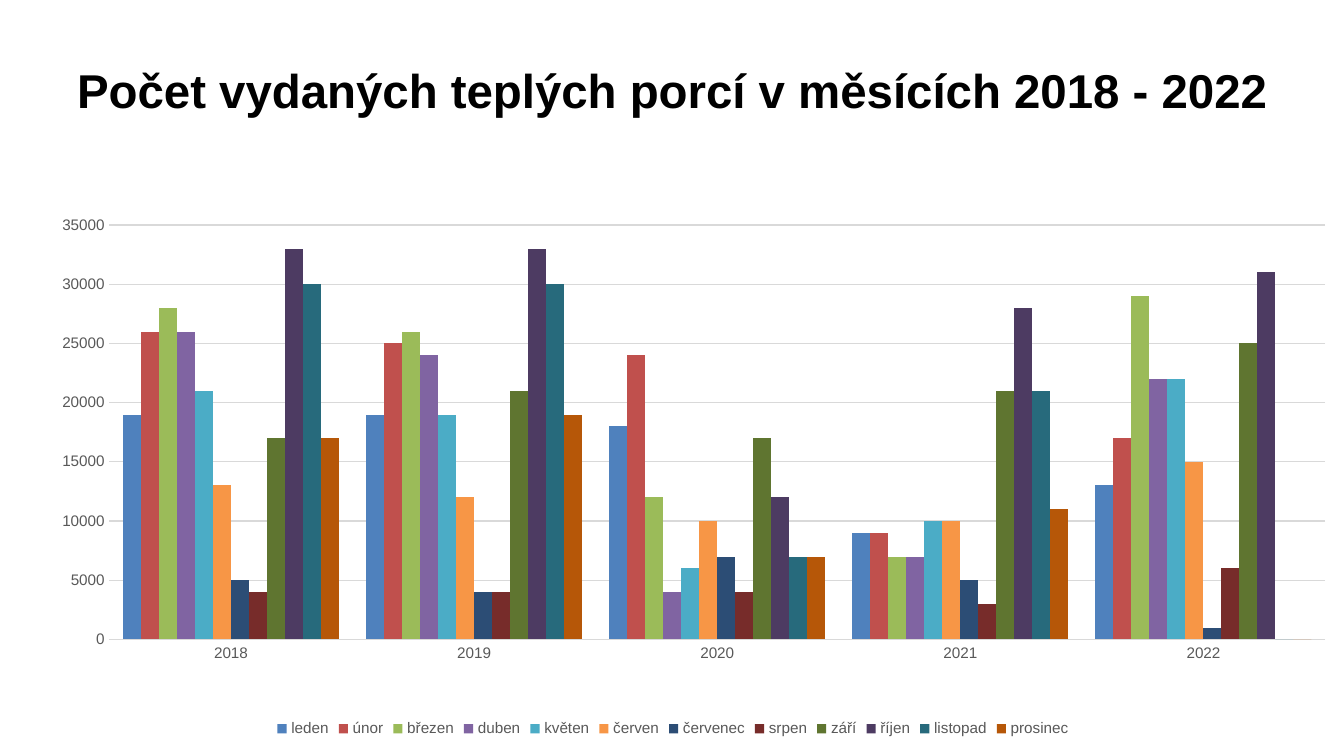
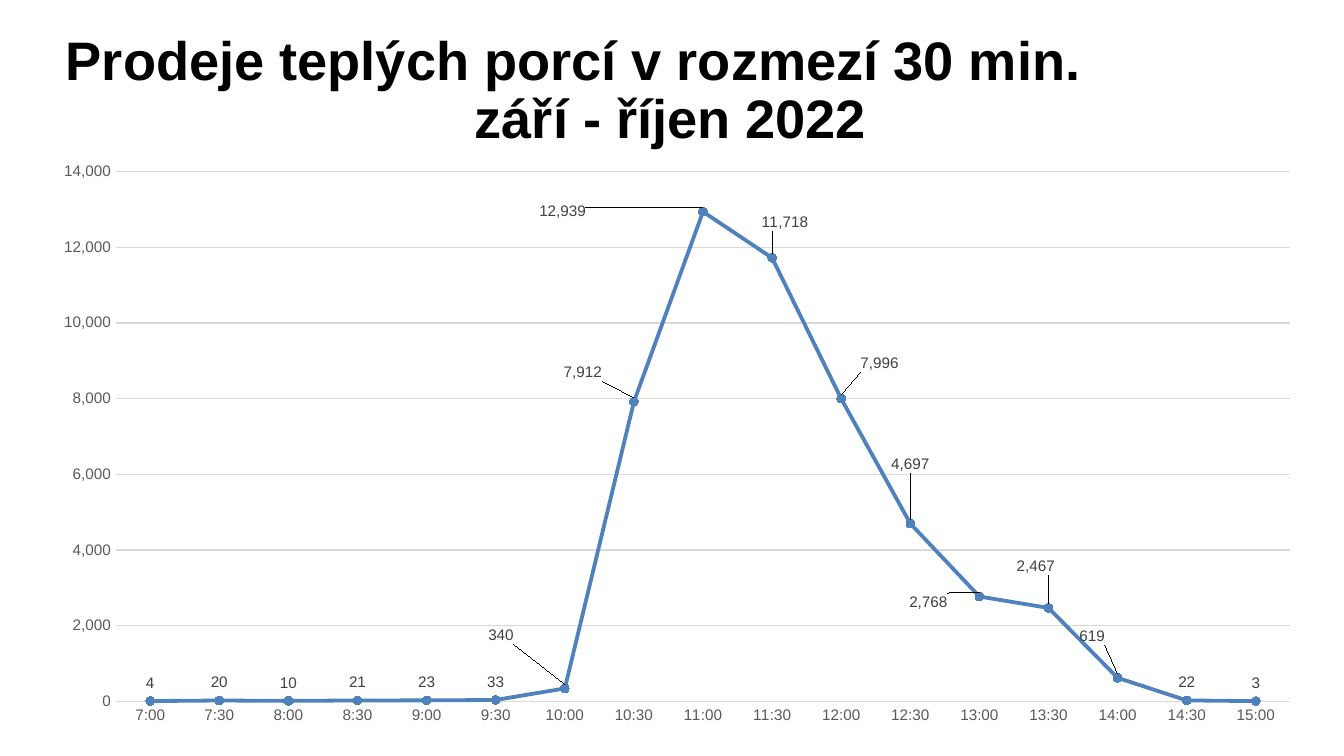
"""Builds two slides with charts of warm meal portions served and sold."""
import pptx
import pptx.chart.data
import pptx.dml.color
import pptx.enum.chart
import pptx.enum.text
import pptx.oxml
import pptx.oxml.ns
import pptx.util

Inches, Pt = pptx.util.Inches, pptx.util.Pt
ALIGN = pptx.enum.text.PP_ALIGN
XL = pptx.enum.chart

FONT = "Arial"
COLORS = {"title": "000000", "axis": "595959", "grid": "D9D9D9",
          "label": "404040", "line": "4F81BD"}

YEARS = ["2018", "2019", "2020", "2021", "2022"]
MONTHS = [
    ("leden", "4F81BD", (19000, 19000, 18000, 9000, 13000)),
    ("únor", "C0504D", (26000, 25000, 24000, 9000, 17000)),
    ("březen", "9BBB59", (28000, 26000, 12000, 7000, 29000)),
    ("duben", "8064A2", (26000, 24000, 4000, 7000, 22000)),
    ("květen", "4BACC6", (21000, 19000, 6000, 10000, 22000)),
    ("červen", "F79646", (13000, 12000, 10000, 10000, 15000)),
    ("červenec", "2C4D75", (5000, 4000, 7000, 5000, 1000)),
    ("srpen", "772C2A", (4000, 4000, 4000, 3000, 6000)),
    ("září", "5F7530", (17000, 21000, 17000, 21000, 25000)),
    ("říjen", "4D3B62", (33000, 33000, 12000, 28000, 31000)),
    ("listopad", "276A7C", (30000, 30000, 7000, 21000, 0)),
    ("prosinec", "B65708", (17000, 19000, 7000, 11000, 0)),
]

SALES = [4, 20, 10, 21, 23, 33, 340, 7912, 12939, 11718, 7996, 4697,
         2768, 2467, 619, 22, 3]
TIMES = [f"{7 + i // 2}:{i % 2 * 30:02d}" for i in range(len(SALES))]
LABEL_SHIFTS = {6: (-0.05, -0.06), 7: (-0.04, -0.02), 8: (-0.11, 0.03),
                9: (0.01, -0.03), 10: (0.03, -0.03), 11: (0, -0.07),
                12: (-0.04, 0.04), 13: (-0.01, -0.04), 14: (-0.02, -0.04)}
NO_LEADER_LINES = (
    f'<c:extLst {pptx.oxml.ns.nsdecls("c")}>'
    '<c:ext uri="{CE6537A1-D6FC-4f65-9D91-7224C49458BB}"'
    ' xmlns:c15="http://schemas.microsoft.com/office/drawing/2012/chart">'
    '<c15:showLeaderLines val="0"/></c:ext></c:extLst>')


def rgb(name):
    return pptx.dml.color.RGBColor.from_string(COLORS.get(name, name))


def set_font(font, size, color):
    font.name, font.size = FONT, Pt(size)
    font.color.rgb = rgb(color)


def manual_layout(**values):
    root = pptx.oxml.parse_xml(
        f'<c:layout {pptx.oxml.ns.nsdecls("c")}><c:manualLayout/></c:layout>')
    for tag, value in values.items():
        child = root[0].makeelement(pptx.oxml.ns.qn(f"c:{tag}"), {"val": str(value)})
        root[0].append(child)
    return root


def add_titled_slide(prs, lines, size, left, top, height):
    slide = prs.slides.add_slide(prs.slide_layouts[5])
    sp = slide.shapes.title
    sp.left, sp.top, sp.width, sp.height = map(Inches, (left, top, 9.92, height))
    tf = sp.text_frame
    tf.margin_left = tf.margin_right = tf.margin_top = tf.margin_bottom = 0
    tf.word_wrap = True
    tf.auto_size = pptx.enum.text.MSO_AUTO_SIZE.NONE
    tf.vertical_anchor = pptx.enum.text.MSO_ANCHOR.MIDDLE
    tf.text = "\n".join(text for text, _ in lines)
    for p, (_, align) in zip(tf.paragraphs, lines):
        p.alignment, p.line_spacing = align, 0.9
        p.space_before = Pt(0)
        set_font(p.font, size, "title")
        p.font.bold = True
    return slide


def add_styled_chart(slide, kind, box, data, plot_box, top_value, step, number_format):
    chart = slide.shapes.add_chart(kind, *map(Inches, box), data).chart
    chart.has_title = False
    chart.has_legend = False
    set_font(chart.font, 10, "title")
    for axis in (chart.category_axis, chart.value_axis):
        axis.major_tick_mark = axis.minor_tick_mark = XL.XL_TICK_MARK.NONE
        set_font(axis.tick_labels.font, 9, "axis")
    values = chart.value_axis
    values.minimum_scale, values.maximum_scale, values.major_unit = 0, top_value, step
    values.tick_labels.number_format = number_format
    values.tick_labels.number_format_is_linked = False
    values.format.line.fill.background()
    values.has_major_gridlines = True
    for line in (chart.category_axis.format.line, values.major_gridlines.format.line):
        line.color.rgb, line.width = rgb("grid"), Pt(0.75)
    chart.plots[0].vary_by_categories = False
    plot_area = chart.element.find(".//" + pptx.oxml.ns.qn("c:plotArea"))
    for old in plot_area.findall(pptx.oxml.ns.qn("c:layout")):
        plot_area.remove(old)
    x, y, w, h = plot_box
    plot_area.insert(0, manual_layout(layoutTarget="inner", xMode="edge", yMode="edge",
                                      x=x, y=y, w=w, h=h))
    return chart


def build_months(prs):
    slide = add_titled_slide(
        prs, [("Počet vydaných teplých porcí v měsících 2018 - 2022", ALIGN.CENTER)],
        28, 0.55, 0.55, 0.42)
    data = pptx.chart.data.CategoryChartData()
    data.categories = YEARS
    for name, _, values in MONTHS:
        data.add_series(name, values)
    chart = add_styled_chart(slide, XL.XL_CHART_TYPE.COLUMN_CLUSTERED,
                             (0.17, 1.15, 10.7, 4.94), data,
                             (0.068, 0.141, 0.932, 0.688), 35000, 5000, "General")
    plot = chart.plots[0]
    plot.gap_width, plot.overlap = 150, 0
    for series, (_, color, _) in zip(plot.series, MONTHS):
        series.format.fill.solid()
        series.format.fill.fore_color.rgb = rgb(color)
    chart.has_legend = True
    chart.legend.position = XL.XL_LEGEND_POSITION.BOTTOM
    chart.legend.include_in_layout = False
    set_font(chart.legend.font, 9, "axis")


def build_sales(prs):
    slide = add_titled_slide(
        prs, [("Prodeje teplých porcí v rozmezí 30 min.", ALIGN.LEFT),
              ("září - říjen 2022", ALIGN.CENTER)], 32, 0.54, 0.27, 0.97)
    data = pptx.chart.data.CategoryChartData(number_format="#,##0")
    data.categories = TIMES
    data.add_series("Series 1", SALES)
    chart = add_styled_chart(slide, XL.XL_CHART_TYPE.LINE_MARKERS,
                             (0.32, 1.24, 10.47, 4.79), data,
                             (0.06, 0.035, 0.92, 0.907), 14000, 2000, "#,##0")
    series = chart.plots[0].series[0]
    series.smooth = False
    series.format.line.color.rgb, series.format.line.width = rgb("line"), Pt(2.25)
    marker = series.marker
    marker.style, marker.size = XL.XL_MARKER_STYLE.CIRCLE, 5
    marker.format.fill.solid()
    marker.format.fill.fore_color.rgb = rgb("line")
    marker.format.line.color.rgb = rgb("line")
    labels = series.data_labels
    labels.show_value = True
    labels.position = XL.XL_LABEL_POSITION.ABOVE
    labels.number_format, labels.number_format_is_linked = "#,##0", False
    set_font(labels.font, 9, "label")
    for i in LABEL_SHIFTS:
        label = series.points[i].data_label
        set_font(label.font, 9, "label")
        label.position = XL.XL_LABEL_POSITION.ABOVE
    for node in chart.element.iter(pptx.oxml.ns.qn("c:dLbl")):
        idx = node.find(pptx.oxml.ns.qn("c:idx"))
        x, y = LABEL_SHIFTS[int(idx.get("val"))]
        idx.addnext(manual_layout(x=x, y=y))
    series_labels = chart.element.find(".//" + pptx.oxml.ns.qn("c:dLbls"))
    series_labels.append(pptx.oxml.parse_xml(NO_LEADER_LINES))


def main():
    prs = pptx.Presentation()
    prs.slide_width, prs.slide_height = Inches(11.02), Inches(6.2)
    build_months(prs)
    build_sales(prs)
    prs.save("out.pptx")


if __name__ == "__main__":
    main()
